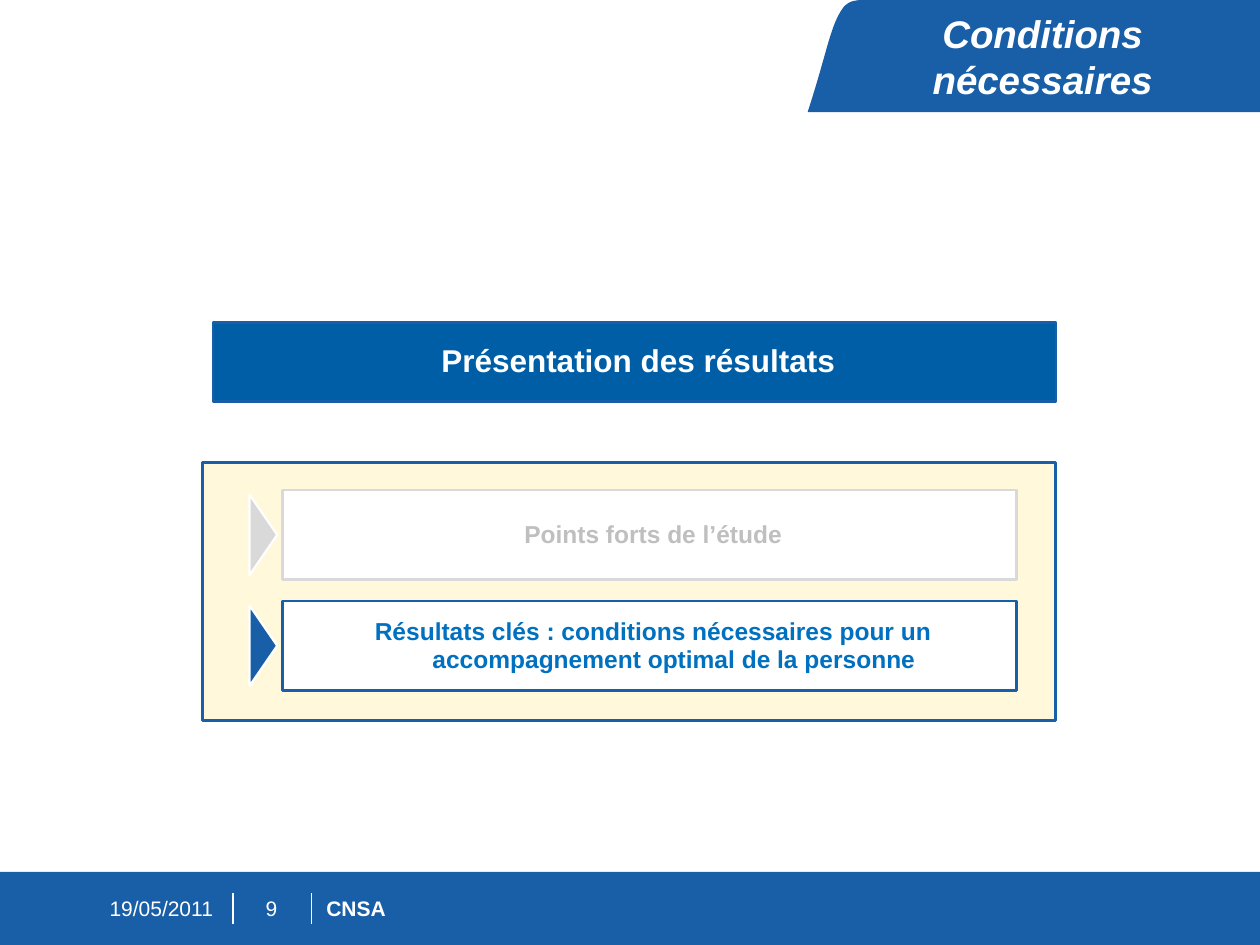
from dataclasses import dataclass

from lxml.etree import SubElement
from pptx import Presentation
from pptx.dml.color import RGBColor
from pptx.enum.shapes import MSO_CONNECTOR, MSO_SHAPE
from pptx.enum.text import MSO_ANCHOR, MSO_AUTO_SIZE, PP_ALIGN
from pptx.oxml.ns import qn
from pptx.shapes.autoshape import Shape
from pptx.slide import Slide
from pptx.text.text import TextFrame
from pptx.util import Inches, Pt


@dataclass(frozen=True)
class Theme:
    font: str = "Arial"
    white: str = "FFFFFF"
    blue: str = "195FA7"
    heading_blue: str = "005EA7"
    active_text: str = "0070C0"
    muted_line: str = "D9D9D9"
    muted_text: str = "BFBFBF"
    cream: str = "FFEB99"
    title_size: int = 22
    heading_size: int = 18
    item_size: int = 14
    footer_size: int = 12
    border: float = 1.5
    marker_border: float = 1.25
    separator: float = 0.75


@dataclass(frozen=True)
class Box:
    left: float
    top: float
    width: float
    height: float

    def lengths(self) -> tuple:
        return tuple(Inches(v) for v in (self.left, self.top, self.width, self.height))


@dataclass(frozen=True)
class AgendaItem:
    text: str
    accent: str
    text_color: str


@dataclass(frozen=True)
class FooterText:
    text: str
    left: float
    width: float
    bold: bool = False
    alignment: PP_ALIGN = PP_ALIGN.LEFT


THEME = Theme()
POINTS_PER_CURVE = 12
ITEMS = (
    AgendaItem("Points forts de l’étude", THEME.muted_line, THEME.muted_text),
    AgendaItem(
        "Résultats clés : conditions nécessaires pour un accompagnement optimal de la personne",
        THEME.blue,
        THEME.active_text,
    ),
)
ITEM_TOP, ITEM_PITCH, ITEM_HEIGHT = 3.89, 0.88, 0.71
FOOTER_TEXTS = (
    FooterText("19/05/2011", 0.87, 0.87),
    FooterText("9", 1.96, 0.39, alignment=PP_ALIGN.CENTER),
    FooterText("CNSA", 2.59, 4.38, bold=True),
)
FOOTER_SEPARATORS = (1.85, 2.47)


def color(value: str) -> RGBColor:
    return RGBColor.from_string(value)


def paint(shape: Shape, fill: str, line: str | None = None, width: float = 0) -> None:
    shape.shadow.inherit = False
    shape.fill.solid()
    shape.fill.fore_color.rgb = color(fill)
    if line is None:
        shape.line.fill.background()
    else:
        shape.line.color.rgb = color(line)
        shape.line.width = Pt(width)


def write(frame: TextFrame, text: str, size: int, text_color: str, bold: bool = False,
          italic: bool = False, alignment: PP_ALIGN = PP_ALIGN.CENTER,
          side_margin: float = 0) -> None:
    frame.word_wrap = True
    frame.auto_size = MSO_AUTO_SIZE.NONE
    frame.vertical_anchor = MSO_ANCHOR.MIDDLE
    frame.margin_top = frame.margin_bottom = 0
    frame.margin_left = frame.margin_right = Inches(side_margin)
    frame.text = text
    paragraph = frame.paragraphs[0]
    paragraph.alignment = alignment
    font = paragraph.font
    font.name, font.size, font.bold, font.italic = THEME.font, Pt(size), bold, italic
    font.color.rgb = color(text_color)


def add_panel(slide: Slide, box: Box, fill: str, line: str | None = None) -> Shape:
    panel = slide.shapes.add_shape(MSO_SHAPE.RECTANGLE, *box.lengths())
    paint(panel, fill, line, THEME.border)
    return panel


def add_label(slide: Slide, box: Box, fill: str, line: str, text: str, size: int,
              text_color: str) -> None:
    frame = add_panel(slide, box, fill, line).text_frame
    write(frame, text, size, text_color, bold=True, side_margin=0.39)
    paragraph = frame.paragraphs[0]
    paragraph.line_spacing = 0.95
    properties = paragraph._p.get_or_add_pPr()
    properties.set("marL", str(Inches(0.39)))
    properties.set("indent", str(Inches(-0.33)))


def curve(*controls: tuple[float, float]) -> list[tuple[float, float]]:
    points = []
    for step in range(1, POINTS_PER_CURVE + 1):
        t = step / POINTS_PER_CURVE
        weights = ((1 - t) ** 3, 3 * t * (1 - t) ** 2, 3 * t**2 * (1 - t), t**3)
        points.append(tuple(sum(w * c[axis] for w, c in zip(weights, controls)) for axis in (0, 1)))
    return points


def add_title_tab(slide: Slide) -> None:
    points = [(6.86, 0)]
    points += curve((6.86, 0), (6.74, 0), (6.73, 0.03), (6.7, 0.05))
    points += curve((6.7, 0.05), (6.59, 0.19), (6.57, 0.4), (6.41, 0.89))
    points.append((10, 0.89))
    builder = slide.shapes.build_freeform(Inches(10), 0)
    builder.add_line_segments([(Inches(x), Inches(y)) for x, y in points], close=True)
    paint(builder.convert_to_shape(), THEME.blue)


def add_title(slide: Slide) -> None:
    title = slide.shapes.title
    title.element.getparent().append(title.element)
    title.left, title.top, title.width, title.height = Box(6.82, 0.25, 2.91, 0.39).lengths()
    write(title.text_frame, "Conditions nécessaires", THEME.title_size, THEME.white,
          bold=True, italic=True)


def add_footer(slide: Slide) -> None:
    add_panel(slide, Box(0, 6.92, 10, 0.58), THEME.blue)
    for x in FOOTER_SEPARATORS:
        separator = slide.shapes.add_connector(
            MSO_CONNECTOR.STRAIGHT, Inches(x), Inches(7.09), Inches(x), Inches(7.33))
        separator.line.color.rgb = color(THEME.white)
        separator.line.width = Pt(THEME.separator)
        SubElement(separator.element.spPr, qn("a:effectLst"))
    for entry in FOOTER_TEXTS:
        box = slide.shapes.add_textbox(*Box(entry.left, 7.07, entry.width, 0.27).lengths())
        write(box.text_frame, entry.text, THEME.footer_size, THEME.white,
              bold=entry.bold, alignment=entry.alignment)


def add_item(slide: Slide, item: AgendaItem, top: float) -> None:
    width, height = 0.64, 0.22
    middle = top + ITEM_HEIGHT / 2
    marker = slide.shapes.add_shape(
        MSO_SHAPE.ISOSCELES_TRIANGLE, *Box(1.77, middle - height / 2, width, height).lengths())
    marker.rotation = 90
    paint(marker, item.accent, THEME.white, THEME.marker_border)
    add_label(slide, Box(2.24, top, 5.83, ITEM_HEIGHT), THEME.white, item.accent,
              item.text, THEME.item_size, item.text_color)


def add_agenda(slide: Slide) -> None:
    background = add_panel(slide, Box(1.61, 3.67, 6.77, 2.05), THEME.cream, THEME.blue)
    fill_color = background.element.spPr.find(qn("a:solidFill"))[0]
    SubElement(fill_color, qn("a:alpha")).set("val", "35000")
    add_label(slide, Box(1.69, 2.56, 6.69, 0.63), THEME.heading_blue, THEME.blue,
              "Présentation des résultats", THEME.heading_size, THEME.white)
    for index, item in enumerate(ITEMS):
        add_item(slide, item, ITEM_TOP + index * ITEM_PITCH)


def main() -> None:
    presentation = Presentation()
    presentation.slide_width, presentation.slide_height = Inches(10), Inches(7.5)
    slide = presentation.slides.add_slide(presentation.slide_layouts[5])
    add_title_tab(slide)
    add_footer(slide)
    add_title(slide)
    add_agenda(slide)
    presentation.save("out.pptx")


if __name__ == "__main__":
    main()
